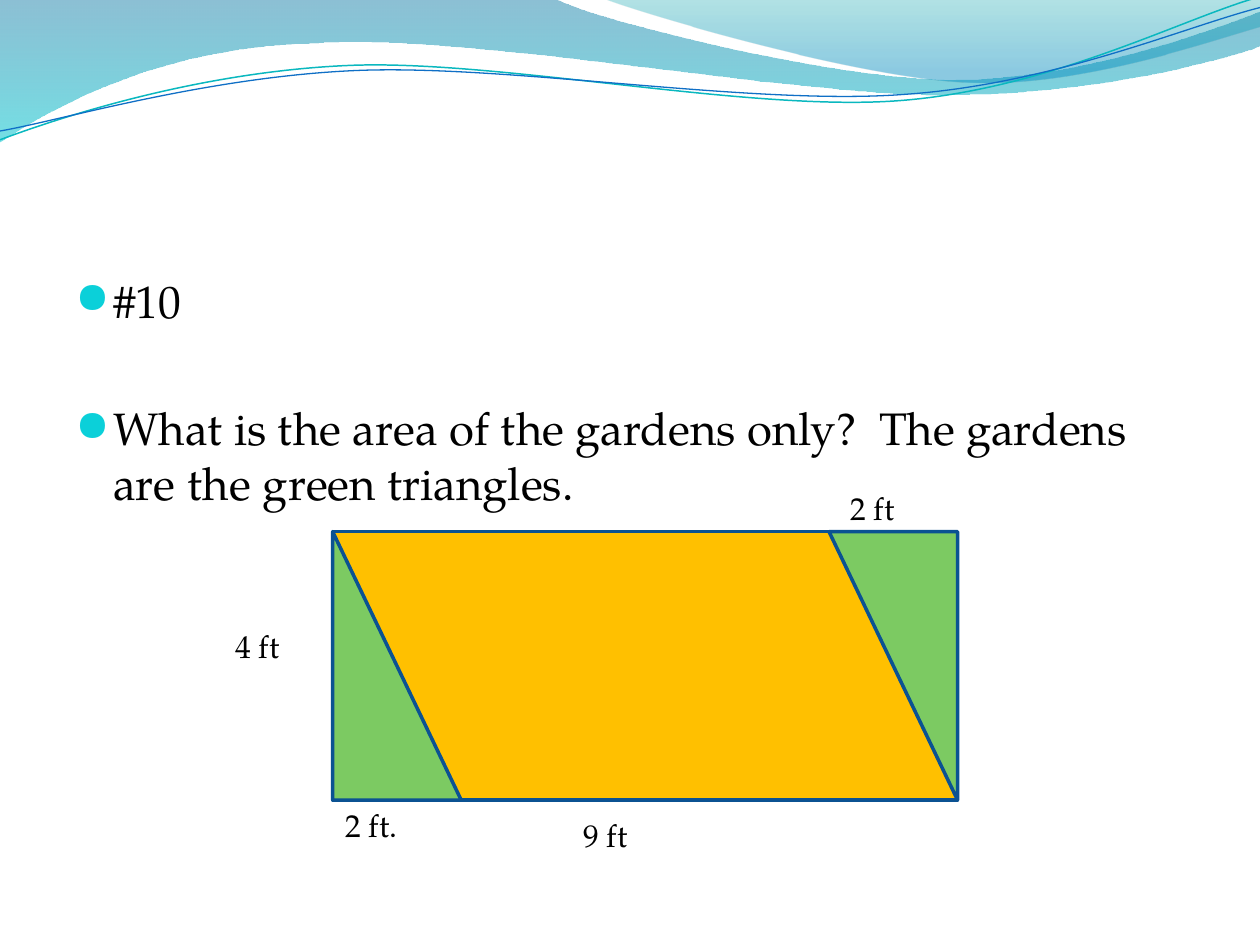
from dataclasses import dataclass

import pptx
import pptx.dml.color
import pptx.enum.shapes
import pptx.oxml
import pptx.oxml.ns
import pptx.util
from pptx.util import Inches

FONT = "TeX Gyre Pagella"
BULLET_FONT = "OpenSymbol"
COLORS = {
    "text": "000000", "bullet": "0BD0D9", "outline": "0B5292",
    "path": "FFC000", "garden": "7CCA62",
    "teal line": "0AB8BF", "blue line": "0F6FC6",
    "deep blue": "0074A1", "aqua": "00C6CF", "teal": "00A1A9", "sky": "008BBF",
}


@dataclass
class Stop:
    position: float
    color: str
    opacity: int  # percent


@dataclass
class Wave:
    """Points in inches: a pair is a straight step, six numbers a cubic curve."""
    start: tuple
    steps: list
    stops: tuple = ()
    line: str = ""
    width: float = 0


@dataclass
class Label:
    text: str
    left: float
    top: float
    width: float


WAVES = [
    Wave((0, 0), [
        (4.4, -0.01), (4.76, 0.17, 6.64, 0.63, 7.58, 0.63),
        (8.53, 0.63, 9.58, 0.26, 10, 0.09), (10.01, 0.36),
        (9.83, 0.44, 8.7, 0.76, 7.46, 0.75), (6.22, 0.75, 3.82, 0.28, 2.57, 0.34),
        (1.29, 0.36, 0.46, 0.83, -0.01, 1.13), (0, 0)],
        stops=(Stop(0, "deep blue", 45), Stop(1, "aqua", 55))),
    Wave((4.79, -0.01), [
        (5.09, 0.11, 6.82, 0.62, 7.69, 0.65), (8.56, 0.69, 9.61, 0.32, 10, 0.21),
        (10, 0), (4.79, -0.01)],
        stops=(Stop(0, "teal", 30), Stop(0.8, "sky", 45))),
    Wave((0, 1.11), [
        (0.48, 0.93, 1.58, 0.57, 2.77, 0.52), (3.95, 0.47, 5.93, 0.89, 7.13, 0.8),
        (8.33, 0.71, 9.38, 0.15, 9.98, -0.02)], line="teal line", width=0.85),
    Wave((0, 1.04), [
        (0.47, 0.96, 1.64, 0.61, 2.83, 0.56), (4.03, 0.51, 5.97, 0.84, 7.17, 0.75),
        (8.36, 0.67, 9.41, 0.21, 10, 0.06)], line="blue line", width=0.75),
]
LABELS = [
    Label("2 ft.", 2.64, 6.35, 1.97), Label("2 ft", 6.65, 3.83, 1.73),
    Label("9 ft", 4.53, 6.43, 2.6), Label("4 ft", 1.77, 4.93, 2.2),
]


def rgb(name: str) -> pptx.dml.color.RGBColor:
    return pptx.dml.color.RGBColor.from_string(COLORS[name])


def element(xml: str):
    """Parse one empty drawing element, such as 'a:alpha val="45000"'."""
    return pptx.oxml.parse_xml(f'<{xml} {pptx.oxml.ns.nsdecls("a")}/>')


def bend_segments(shape, steps: list) -> None:
    """Join the three straight segments of each curved step into one curve."""
    segments = list(shape.element.iter(pptx.oxml.ns.qn("a:lnTo")))
    position = 0
    for step in steps:
        count = len(step) // 2
        if count == 3:
            curve = element("a:cubicBezTo")
            group = segments[position:position + count]
            group[0].addprevious(curve)
            for segment in group:
                curve.append(segment[0])
                segment.getparent().remove(segment)
        position += count


def draw_wave(page, wave: Wave) -> None:
    points = [(Inches(step[i]), Inches(step[i + 1]))
              for step in wave.steps for i in range(0, len(step), 2)]
    builder = page.shapes.build_freeform(*map(Inches, wave.start))
    builder.add_line_segments(points, close=bool(wave.stops))
    shape = builder.convert_to_shape()
    bend_segments(shape, wave.steps)
    shape.shadow.inherit = False
    if not wave.stops:
        shape.fill.background()
        shape.line.color.rgb = rgb(wave.line)
        shape.line.width = pptx.util.Pt(wave.width)
        return
    shape.line.fill.background()
    shape.fill.gradient()
    shape.fill.gradient_angle = 270
    for target, stop in zip(shape.fill.gradient_stops, wave.stops):
        target.position = stop.position
        target.color.rgb = rgb(stop.color)
    gradient = shape.element.spPr.find(pptx.oxml.ns.qn("a:gradFill"))
    for color, stop in zip(gradient.iter(pptx.oxml.ns.qn("a:srgbClr")), wave.stops):
        color.append(element(f'a:alpha val="{stop.opacity * 1000}"'))


def draw_shape(page, kind, left: float, width: float, color: str, rotation: int = 0) -> None:
    shape = page.shapes.add_shape(
        kind, Inches(left), Inches(4.22), Inches(width), Inches(2.13))
    shape.rotation = rotation
    shape.shadow.inherit = False
    shape.fill.solid()
    shape.fill.fore_color.rgb = rgb(color)
    shape.line.color.rgb = rgb("outline")
    shape.line.width = pptx.util.Pt(2)


def add_bullet(para) -> None:
    properties = para._p.get_or_add_pPr()
    properties.set("marL", str(Inches(0.3)))
    properties.set("indent", str(Inches(-0.3)))
    color = element("a:buClr")
    color.append(element(f'a:srgbClr val="{COLORS["bullet"]}"'))
    properties.append(color)
    for xml in ('a:buSzPct val="95000"', f'a:buFont typeface="{BULLET_FONT}"',
                'a:buChar char="●"'):
        properties.append(element(xml))


def add_text(page, *texts: str, left: float, top: float, width: float, height: float,
             size: int = 18, bullets: bool = False, gap: float = 0) -> None:
    box = page.shapes.add_textbox(Inches(left), Inches(top), Inches(width), Inches(height))
    frame = box.text_frame
    frame.word_wrap = True
    for index, text in enumerate(texts):
        para = frame.add_paragraph() if index else frame.paragraphs[0]
        if index:
            para.space_before = pptx.util.Pt(gap)
        if bullets:
            add_bullet(para)
        span = para.add_run()
        span.text = text
        span.font.name = FONT
        span.font.size = pptx.util.Pt(size)
        span.font.color.rgb = rgb("text")


def main() -> None:
    deck = pptx.Presentation()
    deck.slide_width, deck.slide_height = Inches(10), Inches(7.5)
    page = deck.slides.add_slide(deck.slide_layouts[6])

    # Waves across the top
    for wave in WAVES:
        draw_wave(page, wave)

    # Question
    add_text(page, "#10",
             "What is the area of the gardens only?  The gardens are the green triangles.",
             left=0.5, top=2.12, width=9, height=4.8, size=26, bullets=True, gap=41.5)

    # Rectangle with a garden in two corners
    kinds = pptx.enum.shapes.MSO_SHAPE
    left, width, garden = 2.64, 4.96, 1.02
    draw_shape(page, kinds.RECTANGLE, left, width, "path")
    draw_shape(page, kinds.RIGHT_TRIANGLE, left, garden, "garden")
    draw_shape(page, kinds.RIGHT_TRIANGLE, left + width - garden, garden, "garden", rotation=180)

    # Measurements
    for label in LABELS:
        add_text(page, label.text, left=label.left, top=label.top,
                 width=label.width, height=0.4)

    deck.save("out.pptx")


if __name__ == "__main__":
    main()
